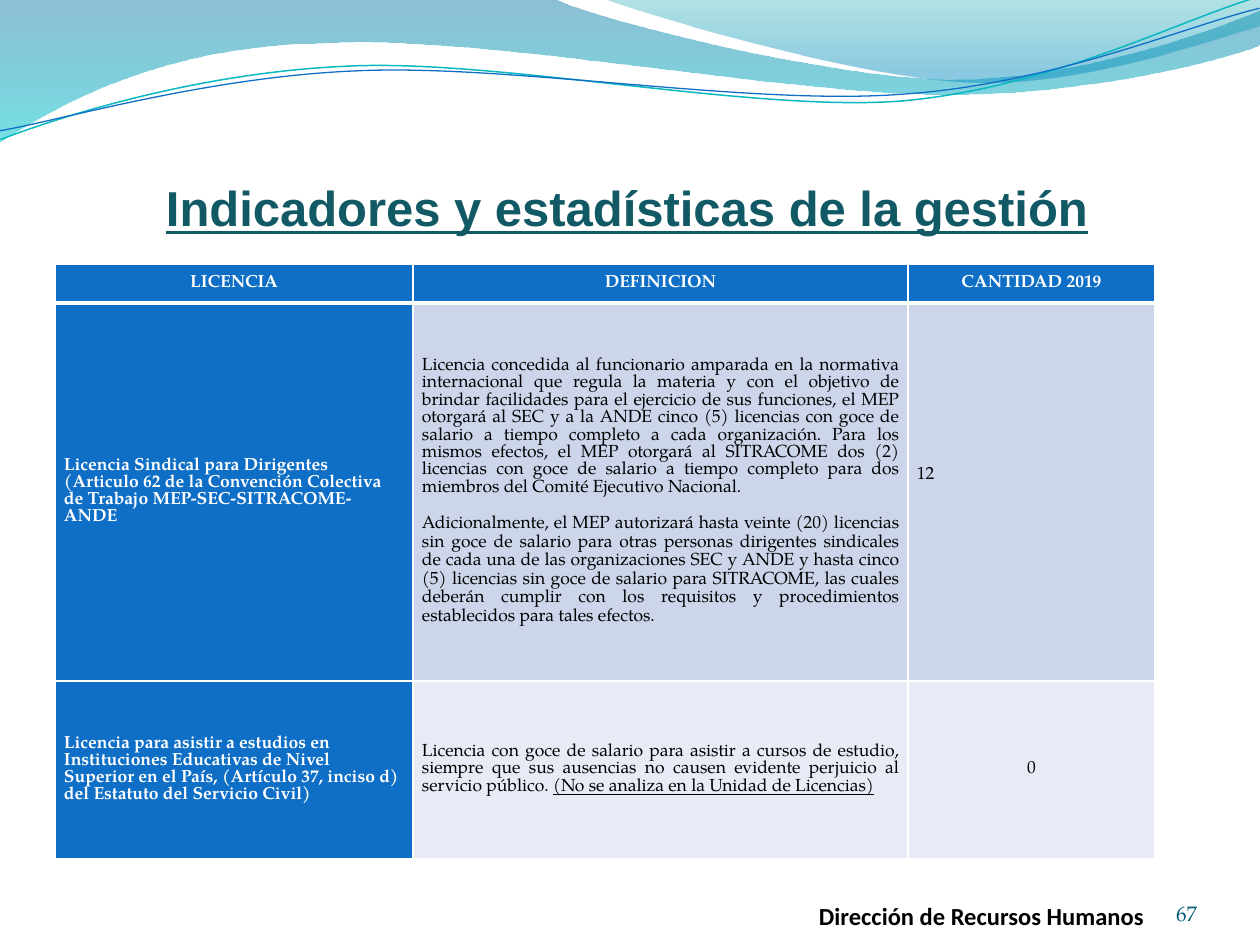
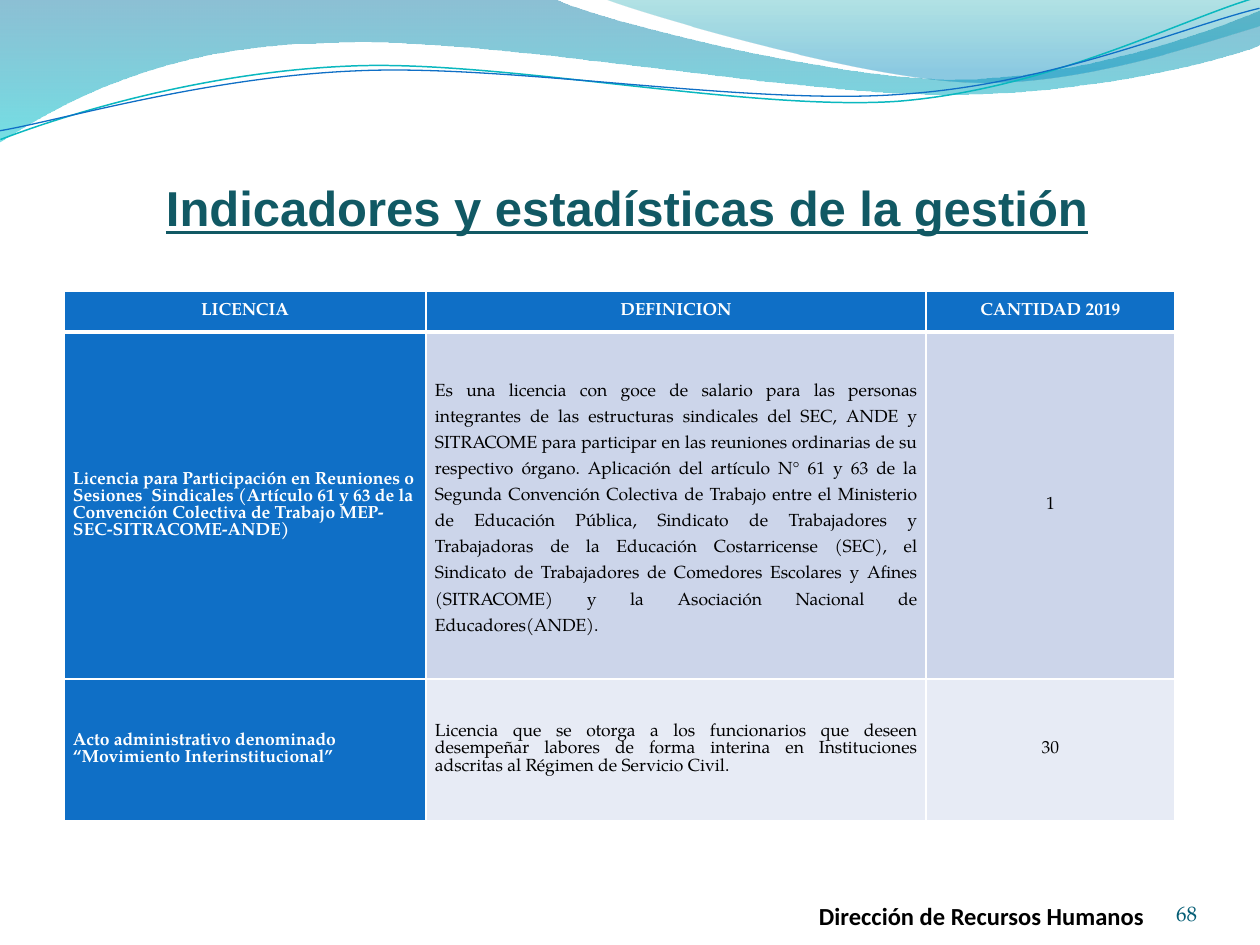
from lxml import etree
from pptx import Presentation
from pptx.dml import color
from pptx.enum import text
from pptx.oxml import ns
from pptx.util import Pt

PX = 914400 / 126
SERIF = "TeX Gyre Pagella"
BLUE, WHITE, BLACK = "0F6FC6", "FFFFFF", "000000"
ROW_FILLS = [BLUE, "CCD5EA", "E7EBF5"]
HEADERS = ["LICENCIA", "DEFINICION", "CANTIDAD 2019"]
LINE_TILT = 357.3
LEFT, CENTER, RIGHT, JUSTIFY = (
    text.PP_ALIGN.LEFT, text.PP_ALIGN.CENTER, text.PP_ALIGN.RIGHT, text.PP_ALIGN.JUSTIFY)
TOP, MIDDLE, BOTTOM = (
    text.MSO_ANCHOR.TOP, text.MSO_ANCHOR.MIDDLE, text.MSO_ANCHOR.BOTTOM)


def px(length):
    return round(length * PX)


def rgb(value):
    return color.RGBColor.from_string(value)


waves = [
    {"start": (0, 0),
     "segments": [[(554, -1)],
                  [(600, 21), (837, 79), (955, 79)], [(1075, 79), (1207, 33), (1260, 11)],
                  [(1261, 45)],
                  [(1239, 55), (1096, 96), (940, 94)], [(783, 94), (481, 35), (324, 43)],
                  [(163, 45), (58, 105), (-1, 142)]],
     "stops": [(0, "0074A1", 45), (1, "00C6CF", 55)]},
    {"start": (604, -1),
     "segments": [[(641, 14), (859, 78), (969, 82)], [(1079, 87), (1211, 40), (1260, 26)],
                  [(1260, 0)]],
     "stops": [(0, "00A1A9", 30), (0.8, "008BBF", 45)]},
    {"start": (-2, 110),
     "segments": [[(58, 90), (199, 52), (350, 53)], [(499, 53), (745, 117), (896, 114)],
                  [(1048, 109), (1184, 45), (1260, 27)]],
     "line": ("0AB8BF", 0.85)},
    {"start": (-2, 101),
     "segments": [[(57, 94), (207, 57), (357, 58)], [(509, 58), (750, 112), (902, 107)],
                  [(1052, 104), (1188, 52), (1262, 38)]],
     "line": (BLUE, 0.75)},
]

pages = [
    {"number": "67", "origin": (55, 264), "columns": [358, 495, 247], "rows": [39, 378, 178],
     "licences": [
         (["Licencia Sindical para Dirigentes",
           "(Articulo 62 de la Convención Colectiva de Trabajo MEP-SEC-SITRACOME-ANDE"],
          ["Licencia concedida al funcionario amparada en la normativa internacional que regula "
           "la materia y con el objetivo de brindar facilidades para el ejercicio de sus "
           "funciones, el MEP otorgará al SEC y a la ANDE cinco (5) licencias con goce de "
           "salario a tiempo completo a cada organización. Para los mismos efectos, el MEP "
           "otorgará al SITRACOME dos (2) licencias con goce de salario a tiempo completo para "
           "dos miembros del Comité Ejecutivo Nacional.",
           "Adicionalmente, el MEP autorizará hasta veinte (20) licencias sin goce de salario "
           "para otras personas dirigentes sindicales de cada una de las organizaciones SEC y "
           "ANDE y hasta cinco (5) licencias sin goce de salario para SITRACOME, las cuales "
           "deberán cumplir con los requisitos y procedimientos establecidos para tales "
           "efectos."],
          ["12"]),
         (["Licencia para asistir a estudios en Instituciones Educativas de Nivel Superior en "
           "el País, (Artículo 37, inciso d) del Estatuto del Servicio Civil)"],
          ["Licencia con goce de salario para asistir a cursos de estudio, siempre que sus "
           "ausencias no causen evidente perjuicio al servicio público. "],
          ["0"])]},
    {"number": "68", "origin": (64, 291), "columns": [362, 500, 249], "rows": [41, 347, 142],
     "licences": [
         (["Licencia para Participación en Reuniones o Sesiones  Sindicales (Artículo 61 y 63 "
           "de la Convención Colectiva de Trabajo MEP-SEC-SITRACOME-ANDE)"],
          ["Es una licencia con goce de salario para las personas integrantes de las "
           "estructuras sindicales del SEC, ANDE y SITRACOME para participar en las reuniones "
           "ordinarias de su respectivo órgano. Aplicación del artículo N° 61 y 63 de la "
           "Segunda Convención Colectiva de Trabajo entre el Ministerio de Educación Pública, "
           "Sindicato de Trabajadores y Trabajadoras de la Educación Costarricense (SEC), el "
           "Sindicato de Trabajadores de Comedores Escolares y Afines (SITRACOME) y la "
           "Asociación Nacional de Educadores(ANDE)."],
          ["1"]),
         (["Acto administrativo denominado “Movimiento Interinstitucional”"],
          ["Licencia que se otorga a los funcionarios que deseen desempeñar labores de forma "
           "interina en Instituciones adscritas al Régimen de Servicio Civil. "],
          ["30"])]},
]

presentation = Presentation()
presentation.slide_width, presentation.slide_height = px(1260), px(945)
tables = []

for page in pages:
    slide = presentation.slides.add_slide(presentation.slide_layouts[6])

    for wave in waves:
        filled = "stops" in wave
        builder = slide.shapes.build_freeform(*wave["start"], scale=PX)
        points = [point for segment in wave["segments"] for point in segment]
        builder.add_line_segments(points, close=filled)
        shape = builder.convert_to_shape()
        shape.shadow.inherit = False

        outline = next(shape.element.spPr.iter(ns.qn("a:path")))
        steps = iter(outline.findall(ns.qn("a:lnTo")))
        for segment in wave["segments"]:
            segment_steps = [next(steps) for _ in segment]
            if len(segment) == 3:
                curve = etree.Element(ns.qn("a:cubicBezTo"))
                segment_steps[0].addprevious(curve)
                for step in segment_steps:
                    curve.append(step[0])
                    outline.remove(step)

        if filled:
            shape.line.fill.background()
            shape.fill.gradient()
            shape.fill.gradient_angle = 270
            for stop, (position, value, _) in zip(shape.fill.gradient_stops, wave["stops"]):
                stop.position = position
                stop.color.rgb = rgb(value)
            tints = shape.element.spPr.iter(ns.qn("a:srgbClr"))
            for tint, (_, _, opacity) in zip(tints, wave["stops"]):
                etree.SubElement(tint, ns.qn("a:alpha")).set("val", str(opacity * 1000))
        else:
            shape.rotation = LINE_TILT
            shape.fill.background()
            shape.line.color.rgb = rgb(wave["line"][0])
            shape.line.width = Pt(wave["line"][1])

    labels = [
        ("Dirección de Recursos Humanos", (819, 880, 377, 50), (0, 6, 0, 0),
         BOTTOM, LEFT, "Calibri", 14, BLACK, True, False),
        (page["number"], (1092, 876, 105, 50), (0, 0, 0, 0),
         BOTTOM, RIGHT, SERIF, 12, "045D75", False, False),
        ("Indicadores y estadísticas de la gestión", (154, 172, 953, 72), (12, 6, 12, 6),
         TOP, LEFT, "Arial", 28, "115964", True, True),
    ]
    for content, box, margins, anchor, align, face, size, value, bold, underline in labels:
        frame = slide.shapes.add_textbox(*map(px, box)).text_frame
        frame.word_wrap = True
        frame.vertical_anchor = anchor
        (frame.margin_left, frame.margin_top,
         frame.margin_right, frame.margin_bottom) = map(px, margins)
        paragraph = frame.paragraphs[0]
        paragraph.text = content
        paragraph.alignment = align
        font = paragraph.font
        font.name, font.size, font.bold, font.underline = face, Pt(size), bold, underline
        font.color.rgb = rgb(value)

    columns, rows = page["columns"], page["rows"]
    table = slide.shapes.add_table(
        len(rows), len(columns), *map(px, page["origin"]), px(sum(columns)), px(sum(rows))).table
    tables.append(table)
    for column, width in zip(table.columns, columns):
        column.width = px(width)
    for row, height in zip(table.rows, rows):
        row.height = px(height)

    contents = [[[header] for header in HEADERS], *page["licences"]]
    for row_index, row_contents in enumerate(contents):
        for column_index, paragraphs in enumerate(row_contents):
            emphasized = row_index == 0 or column_index == 0
            cell = table.cell(row_index, column_index)
            cell.text = "\n".join(paragraphs)
            cell.vertical_anchor = MIDDLE
            cell.margin_left = cell.margin_right = px(9)
            cell.margin_top = cell.margin_bottom = 0
            cell.fill.solid()
            cell.fill.fore_color.rgb = rgb(BLUE if emphasized else ROW_FILLS[row_index])
            for paragraph in cell.text_frame.paragraphs:
                paragraph.alignment = (
                    CENTER if row_index == 0 else [LEFT, JUSTIFY, CENTER][column_index])
                font = paragraph.font
                font.name, font.size, font.bold = SERIF, Pt(10), emphasized
                font.color.rgb = rgb(WHITE if emphasized else BLACK)

            properties = cell._tc.get_or_add_tcPr()
            for order, side in enumerate(["lnL", "lnR", "lnT", "lnB"]):
                thick = (row_index, side) in [(0, "lnB"), (1, "lnT")]
                border = etree.Element(ns.qn(f"a:{side}"), w=str(Pt(3 if thick else 1)))
                border_fill = etree.SubElement(border, ns.qn("a:solidFill"))
                etree.SubElement(border_fill, ns.qn("a:srgbClr"), val=WHITE)
                properties.insert(order, border)

union_table, meetings_table = tables
union_terms = union_table.cell(1, 1).text_frame.paragraphs[1]
union_terms.line_spacing = 1.07
union_terms.space_before = Pt(10)
union_count = union_table.cell(1, 2)
union_count.margin_bottom = px(32)
union_count.text_frame.paragraphs[0].alignment = LEFT
study_note = union_table.cell(2, 1).text_frame.paragraphs[0].add_run()
study_note.text = "(No se analiza en la Unidad de Licencias)"
study_note.font.underline = True
meetings_table.cell(1, 1).text_frame.paragraphs[0].line_spacing = 1.5

presentation.save("out.pptx")
